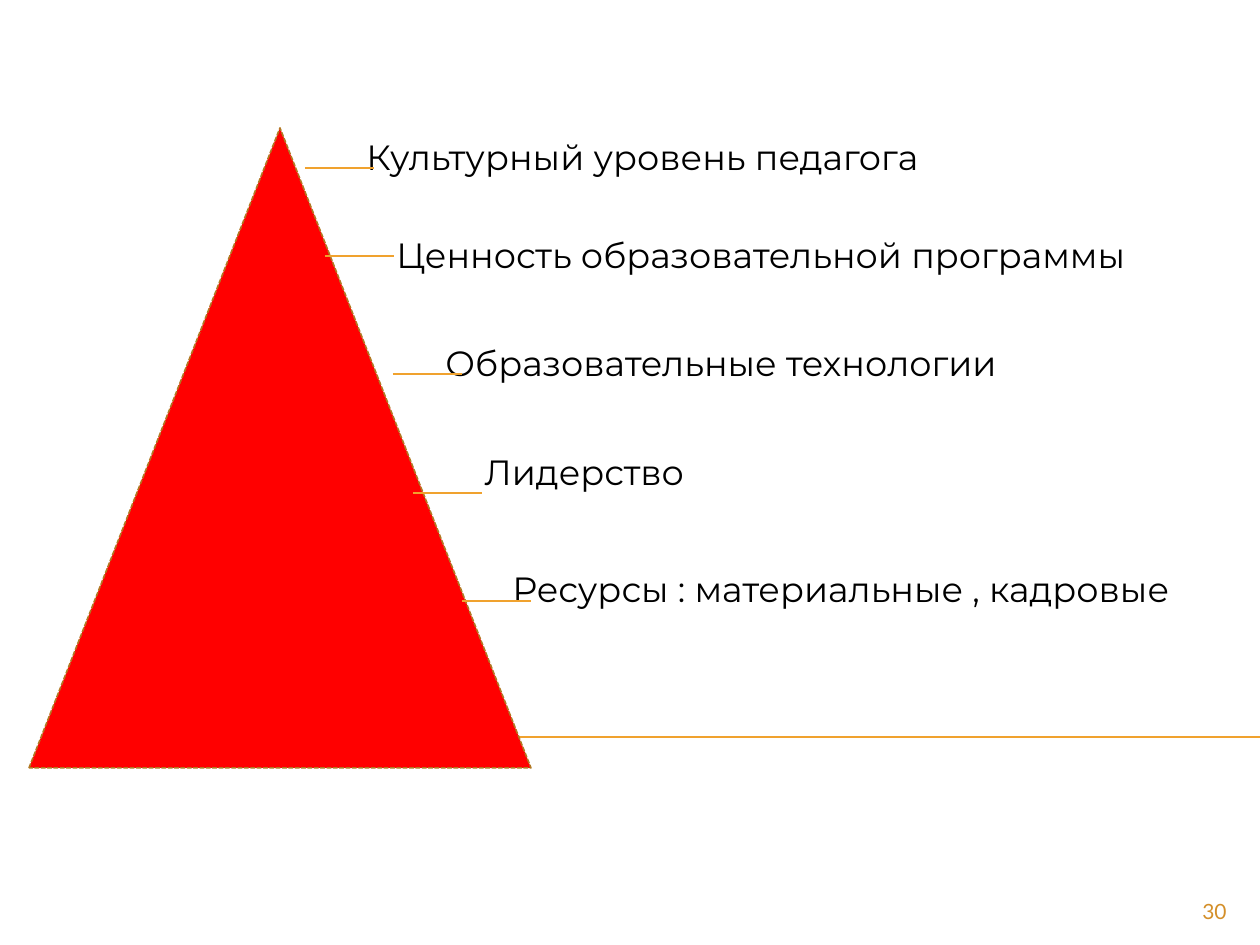
"""Build a slide with a pyramid of five labelled levels."""
from dataclasses import dataclass
from typing import Any

from lxml.etree import SubElement as add_sub
from pptx import Presentation
from pptx.dml.color import RGBColor as Rgb
from pptx.enum.dml import MSO_LINE as Dash
from pptx.enum.shapes import MSO_CONNECTOR as Conn, MSO_SHAPE as Kind
from pptx.enum.text import MSO_AUTO_SIZE as Fit, PP_ALIGN as Align
from pptx.oxml.ns import qn
from pptx.util import Emu, Pt


@dataclass(frozen=True)
class Theme:
    """Colours, fonts and sizes of the slide."""

    red: str = "FF0000"
    edge: str = "B27822"
    gold: str = "F0A22E"
    ink: str = "000000"
    page: str = "D48F29"
    body: str = "Montserrat"
    foot: str = "Lato"
    big: int = 20
    small: int = 12
    rule: float = 0.75
    rim: float = 0.9


@dataclass(frozen=True)
class Level:
    """A label and its leader line."""

    text: str
    left: int
    top: int
    wide: int
    tick_x: int
    tick_y: int


THEME = Theme()
TICK = 69
HIGH = 55
LEVELS = (
    Level("Культурный уровень педагога", 354, 129, 627, 305, 168),
    Level("Ценность образовательной программы", 384, 227, 818, 325, 256),
    Level("Образовательные технологии", 433, 335, 748, 393, 374),
    Level("Лидерство", 472, 444, 237, 413, 493),
    Level("Ресурсы : материальные , кадровые", 500, 561, 760, 462, 601),
)


def px(num: int) -> Emu:
    """Turn px into EMU at 126 px to the inch."""
    return Emu(round(num * 914400 / 126))


def add_text(slide: Any, text: str, box: tuple[int, ...], *, font: str, size: int,
             color: str, align: Align = Align.LEFT, fit: Fit = Fit.NONE) -> None:
    """Add a one-line text box."""
    frame = slide.shapes.add_textbox(*map(px, box)).text_frame
    frame.word_wrap = True
    frame.auto_size = fit
    para = frame.paragraphs[0]
    para.alignment = align
    run = para.add_run()
    run.text = text
    run.font.name = font
    run.font.size = Pt(size)
    run.font.color.rgb = Rgb.from_string(color)


def add_rule(slide: Any, left: int, right: int, top: int) -> None:
    """Add a level gold line."""
    rule = slide.shapes.add_connector(Conn.STRAIGHT, *map(px, (left, top, right, top)))
    rule.line.color.rgb = Rgb.from_string(THEME.gold)
    rule.line.width = Pt(THEME.rule)
    add_sub(rule._element.spPr, qn("a:effectLst"))


def add_peak(slide: Any, box: tuple[int, ...]) -> None:
    """Add the red triangle."""
    peak = slide.shapes.add_shape(Kind.ISOSCELES_TRIANGLE, *map(px, box))
    peak.shadow.inherit = False
    peak.fill.solid()
    peak.fill.fore_color.rgb = Rgb.from_string(THEME.red)
    peak.line.color.rgb = Rgb.from_string(THEME.edge)
    peak.line.width = Pt(THEME.rim)
    peak.line.dash_style = Dash.SQUARE_DOT


def main() -> None:
    """Build and save the slide."""
    deck = Presentation()
    deck.slide_width, deck.slide_height = px(1260), px(945)
    slide = deck.slides.add_slide(deck.slide_layouts[6])
    add_rule(slide, 71, 1260, 737)
    add_peak(slide, (29, 128, 502, 640))
    for level in LEVELS:
        add_text(slide, level.text, (level.left, level.top, level.wide, HIGH),
                 font=THEME.body, size=THEME.big, color=THEME.ink, fit=Fit.SHAPE_TO_FIT_TEXT)
    for level in LEVELS:
        add_rule(slide, level.tick_x, level.tick_x + TICK, level.tick_y)
    add_text(slide, "30", (1134, 892, 105, 34), font=THEME.foot, size=THEME.small,
             color=THEME.page, align=Align.RIGHT)
    deck.save("out.pptx")


if __name__ == "__main__":
    main()
